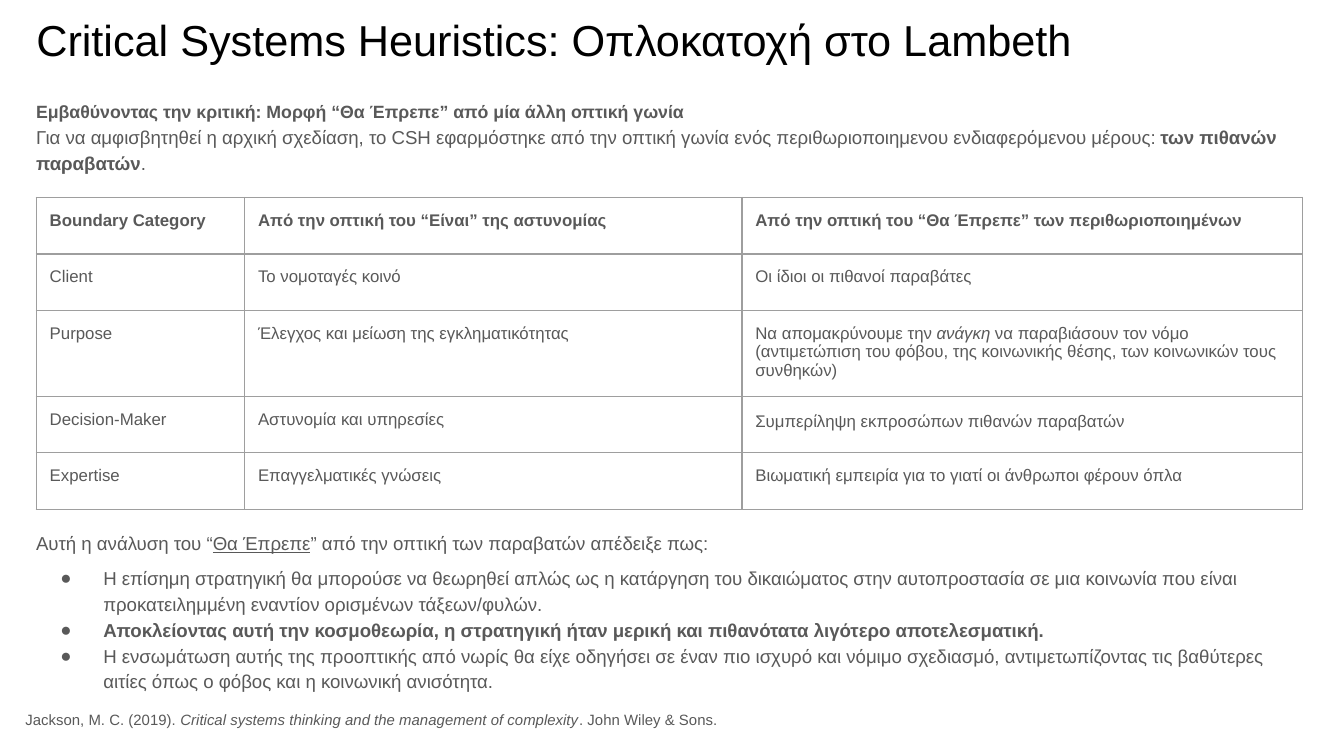
from lxml import etree
from pptx import Presentation
from pptx.dml.color import RGBColor
from pptx.enum.text import MSO_ANCHOR, MSO_AUTO_SIZE, PP_ALIGN
from pptx.oxml.ns import qn
from pptx.util import Inches, Pt

TOP = MSO_ANCHOR.TOP
LEFT = PP_ALIGN.LEFT
NO_FIT = MSO_AUTO_SIZE.NONE
TITLE_ONLY = 5


def color(hex_value):
    return RGBColor.from_string(hex_value)


def add_bullet(paragraph, hex_value, font):
    properties = paragraph._p.get_or_add_pPr()
    properties.set("marL", str(Inches(0.5)))
    properties.set("indent", str(Inches(-0.32)))
    bullet_color = etree.SubElement(properties, qn("a:buClr"))
    etree.SubElement(bullet_color, qn("a:srgbClr"), val=hex_value)
    etree.SubElement(properties, qn("a:buFont"), typeface=font)
    etree.SubElement(properties, qn("a:buChar"), char="●")


def write(paragraph, runs, size=10, ink="595959", bold=False, font="Arial",
          spacing=None, before=None, bullet=False):
    """Fill a paragraph; runs is a string or a list of (text, styles) with styles from "b", "i", "u"."""
    if bullet:
        add_bullet(paragraph, ink, font)
    paragraph.alignment = LEFT
    if spacing:
        paragraph.line_spacing = spacing
    if before:
        paragraph.space_before = Pt(before)
    if isinstance(runs, str):
        runs = [(runs, "")]
    for text, styles in runs:
        run = paragraph.add_run()
        run.text = text
        run.font.name = font
        run.font.size = Pt(size)
        run.font.color.rgb = color(ink)
        run.font.bold = bold or "b" in styles
        run.font.italic = "i" in styles
        run.font.underline = "u" in styles


class SlideBuilder:
    """Holds the current slide and its shared style."""
    inset = Inches(0.1)
    border = "9E9E9E"

    def __init__(self, slide):
        self.slide = slide

    def set_insets(self, holder):
        holder.margin_left = holder.margin_right = self.inset
        holder.margin_top = holder.margin_bottom = self.inset

    def prepare_frame(self, frame):
        self.set_insets(frame)
        frame.word_wrap = True
        frame.auto_size = NO_FIT
        frame.vertical_anchor = TOP

    def title(self, text, left, top, width, height):
        heading = self.slide.shapes.title
        heading.left, heading.top = Inches(left), Inches(top)
        heading.width, heading.height = Inches(width), Inches(height)
        self.prepare_frame(heading.text_frame)
        write(heading.text_frame.paragraphs[0], text, size=23.2, ink="000000")

    def text(self, paragraphs, left, top, width, height):
        """Add a text box; paragraphs is a list of (runs, format) pairs."""
        frame = self.slide.shapes.add_textbox(
            Inches(left), Inches(top), Inches(width), Inches(height)).text_frame
        self.prepare_frame(frame)
        for index, (runs, look) in enumerate(paragraphs):
            paragraph = frame.add_paragraph() if index else frame.paragraphs[0]
            write(paragraph, runs, **look)

    def outline_cell(self, cell):
        properties = cell._tc.get_or_add_tcPr()
        for side in ("a:lnL", "a:lnR", "a:lnT", "a:lnB"):
            line = etree.SubElement(properties, qn(side), w=str(Pt(0.75)))
            fill = etree.SubElement(line, qn("a:solidFill"))
            etree.SubElement(fill, qn("a:srgbClr"), val=self.border)

    def table(self, rows, left, top, widths, heights, spaced_cell):
        grid = self.slide.shapes.add_table(
            len(rows), len(widths), Inches(left), Inches(top),
            Inches(sum(widths)), Inches(sum(heights))).table
        grid.first_row = grid.horz_banding = False
        for column, width in zip(grid.columns, widths):
            column.width = Inches(width)
        for r, (row, height) in enumerate(zip(rows, heights)):
            grid.rows[r].height = Inches(height)
            for c, runs in enumerate(row):
                cell = grid.cell(r, c)
                self.set_insets(cell)
                self.outline_cell(cell)
                cell.fill.background()
                write(cell.text_frame.paragraphs[0], runs, size=9, bold=r == 0,
                      spacing=1.15 if (r, c) == spaced_cell else None)


BODY = {"spacing": 1.15}
BULLET = {"spacing": 1.15, "bullet": True}
TABLE_GAP = 190  # points left free for the table between intro and findings

ARGUMENT = [
    ("Εμβαθύνοντας την κριτική: Μορφή “Θα Έπρεπε” από μία άλλη οπτική γωνία",
     {**BODY, "size": 9.5, "bold": True}),
    ([("Για να αμφισβητηθεί η αρχική σχεδίαση, το CSH εφαρμόστηκε από την οπτική γωνία "
       "ενός περιθωριοποιημενου ενδιαφερόμενου μέρους: ", ""),
      ("των πιθανών παραβατών", "b"), (".", "")], BODY),
    ([("Αυτή η ανάλυση του “", ""), ("Θα Έπρεπε", "u"),
      ("” από την οπτική των παραβατών απέδειξε πως:", "")],
     {**BODY, "before": TABLE_GAP}),
    ("Η επίσημη στρατηγική θα μπορούσε να θεωρηθεί απλώς ως η κατάργηση του δικαιώματος "
     "στην αυτοπροστασία σε μια κοινωνία που είναι προκατειλημμένη εναντίον ορισμένων "
     "τάξεων/φυλών.", {**BULLET, "before": 5}),
    ("Αποκλείοντας αυτή την κοσμοθεωρία, η στρατηγική ήταν μερική και πιθανότατα "
     "λιγότερο αποτελεσματική.", {**BULLET, "bold": True}),
    ("Η ενσωμάτωση αυτής της προοπτικής από νωρίς θα είχε οδηγήσει σε έναν πιο ισχυρό και "
     "νόμιμο σχεδιασμό, αντιμετωπίζοντας τις βαθύτερες αιτίες όπως ο φόβος και η κοινωνική "
     "ανισότητα.", BULLET),
]

BOUNDARIES = [
    ["Boundary Category", "Από την οπτική του “Είναι” της αστυνομίας",
     "Από την οπτική του “Θα Έπρεπε” των περιθωριοποιημένων"],
    ["Client", "Το νομοταγές κοινό", "Οι ίδιοι οι πιθανοί παραβάτες"],
    ["Purpose", "Έλεγχος και μείωση της εγκληματικότητας",
     [("Να απομακρύνουμε την ", ""), ("ανάγκη ", "i"),
      ("να παραβιάσουν τον νόμο (αντιμετώπιση του φόβου, της κοινωνικής θέσης, "
       "των κοινωνικών τους συνθηκών)", "")]],
    ["Decision-Maker", "Αστυνομία και υπηρεσίες",
     "Συμπερίληψη εκπροσώπων πιθανών παραβατών"],
    ["Expertise", "Επαγγελματικές γνώσεις",
     "Βιωματική εμπειρία για το γιατί οι άνθρωποι φέρουν όπλα"],
]

CITATION = [
    ([("Jackson, M. C. (2019). ", ""),
      ("Critical systems thinking and the management of complexity", "i"),
      (". John Wiley & Sons.", "")], {"size": 8}),
]


def main():
    deck = Presentation()
    deck.slide_width = Inches(10)
    deck.slide_height = deck.slide_width * 9 // 16
    builder = SlideBuilder(deck.slides.add_slide(deck.slide_layouts[TITLE_ONLY]))
    builder.title("Critical Systems Heuristics: Οπλοκατοχή στο Lambeth", 0.17, 0, 9.61, 0.63)
    builder.text(ARGUMENT, 0.17, 0.63, 9.61, 4.79)
    builder.text(CITATION, 0.09, 5.19, 8.76, 0.34)
    builder.table(BOUNDARIES, 0.27, 1.47, widths=[1.55, 3.7, 4.17],
                  heights=[0.42, 0.42, 0.64, 0.42, 0.42], spaced_cell=(3, 2))
    deck.save("out.pptx")


if __name__ == "__main__":
    main()
